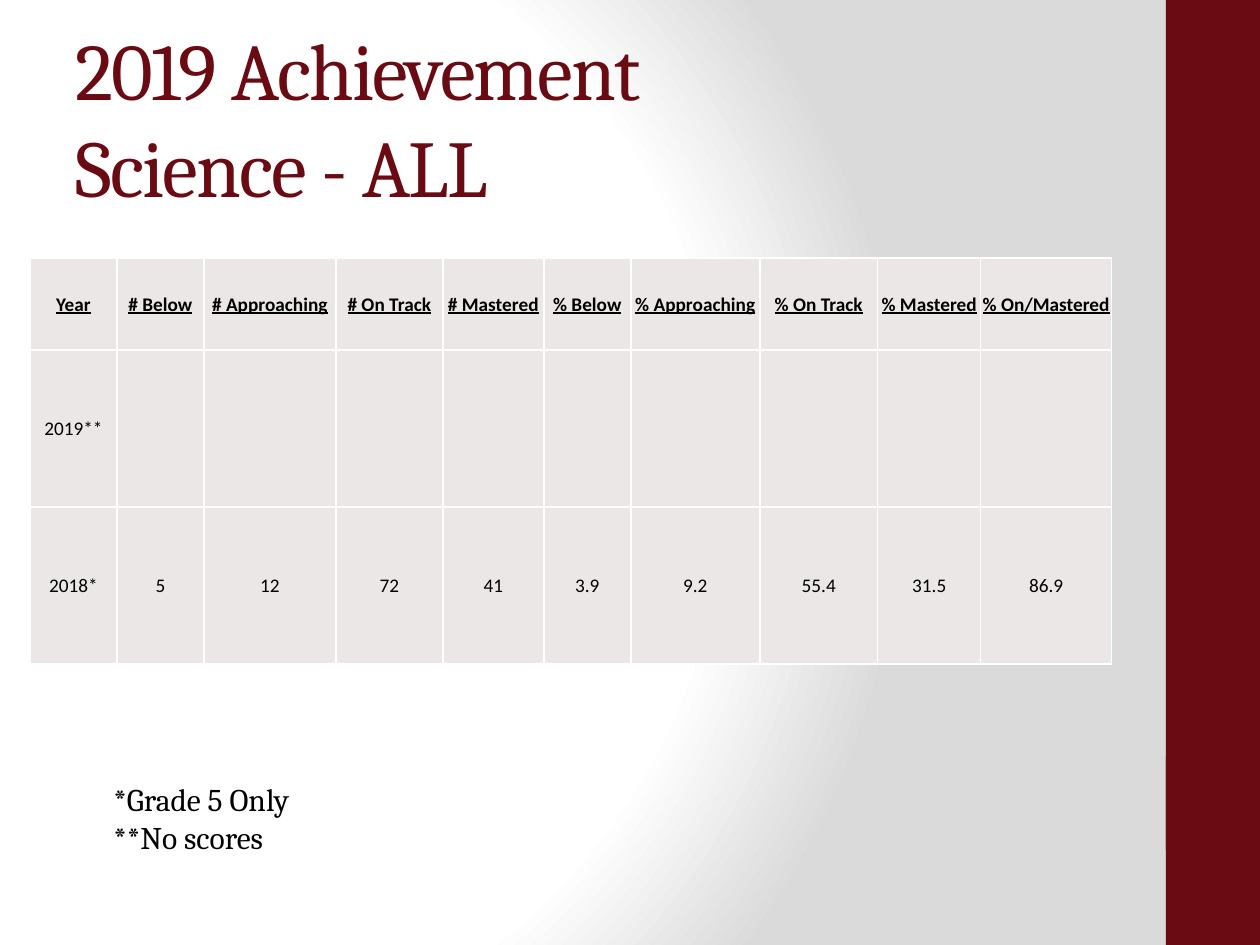
from lxml import etree
from pptx import Presentation
from pptx import util as u
from pptx.dml.color import RGBColor
from pptx.enum import shapes, text
from pptx.oxml import parse_xml
from pptx.oxml.ns import nsdecls, qn

PX = 914400 / 126
COLORS = {"maroon": "6A0A12", "cell": "EBE7E7", "white": "FFFFFF",
          "gray": "DADADA", "black": "000000"}
HEADINGS = ["Year", "# Below", "# Approaching", "# On Track", "# Mastered",
            "% Below", "% Approaching", "% On Track", "% Mastered", "% On/Mastered"]
SCORES = [["2019**"] + [""] * 9,
          ["2018*", "5", "12", "72", "41", "3.9", "9.2", "55.4", "31.5", "86.9"]]
COLUMN_WIDTHS = [87, 87, 132, 107, 101, 87, 129, 118, 103, 131]
ROW_HEIGHTS = [92, 157, 157]


def px(length):
    return u.Emu(round(length * PX))


def rgb(name):
    return RGBColor.from_string(COLORS[name])


def style(paragraph, font_name, size, color):
    font = paragraph.font
    font.name, font.size = font_name, u.Pt(size)
    font.color.rgb = rgb(color)


def add_background(slide):
    stops = "".join(
        f'<a:gs pos="{pos * 1000}"><a:srgbClr val="{COLORS[color]}"/></a:gs>'
        for pos, color in [(0, "white"), (75, "white"), (100, "gray")])
    slide._element.cSld.insert(0, parse_xml(
        f'<p:bg {nsdecls("p", "a")}><p:bgPr><a:gradFill rotWithShape="1">'
        f'<a:gsLst>{stops}</a:gsLst><a:path path="circle">'
        '<a:fillToRect l="20000" t="50000" r="100000" b="50000"/></a:path>'
        '</a:gradFill><a:effectLst/></p:bgPr></p:bg>'))


def add_side_band(slide, left, top, width, height):
    # Full-height band, then the square page-number block on it
    for offset, block_height in [(0, height), (756, width)]:
        band = slide.shapes.add_shape(
            shapes.MSO_SHAPE.RECTANGLE,
            *map(px, (left, top + offset, width, block_height)))
        band.shadow.inherit = False
        band.fill.solid()
        band.fill.fore_color.rgb = rgb("maroon")
        band.line.fill.background()


def add_title(slide, left, top, width, height):
    frame = slide.shapes.add_textbox(*map(px, (left, top, width, height))).text_frame
    frame.word_wrap = True
    frame.vertical_anchor = text.MSO_ANCHOR.MIDDLE
    title = frame.paragraphs[0]
    title.text = "2019 Achievement \vScience - ALL"
    style(title, "Cambria", 46, "maroon")
    for run in title.runs:
        run.font._element.set("spc", "-100")


def add_borders(cell):
    properties = cell._tc.get_or_add_tcPr()
    for index, side in enumerate(("lnL", "lnR", "lnT", "lnB")):
        line = etree.Element(qn(f"a:{side}"), w=str(u.Pt(1)))
        fill = etree.SubElement(line, qn("a:solidFill"))
        etree.SubElement(fill, qn("a:srgbClr"), val=COLORS["white"])
        properties.insert(index, line)


def add_score_table(slide, left, top):
    rows = [HEADINGS] + SCORES
    table = slide.shapes.add_table(
        len(rows), len(HEADINGS), px(left), px(top),
        px(sum(COLUMN_WIDTHS)), px(sum(ROW_HEIGHTS))).table
    for column, width in zip(table.columns, COLUMN_WIDTHS):
        column.width = px(width)
    for row, height in zip(table.rows, ROW_HEIGHTS):
        row.height = px(height)
    for r, values in enumerate(rows):
        for c, value in enumerate(values):
            cell = table.cell(r, c)
            cell.fill.solid()
            cell.fill.fore_color.rgb = rgb("cell")
            cell.margin_left = cell.margin_right = cell.margin_top = px(1)
            cell.margin_bottom = 0
            cell.vertical_anchor = text.MSO_ANCHOR.MIDDLE
            entry = cell.text_frame.paragraphs[0]
            entry.text = value
            entry.alignment = text.PP_ALIGN.CENTER
            style(entry, "Calibri", 11, "black")
            entry.font.bold = entry.font.underline = r == 0
            add_borders(cell)


def add_footnotes(slide, left, top, width, height):
    frame = slide.shapes.add_textbox(*map(px, (left, top, width, height))).text_frame
    frame.word_wrap = False
    frame.auto_size = text.MSO_AUTO_SIZE.SHAPE_TO_FIT_TEXT
    frame.text = "*Grade 5 Only\n**No scores"
    for note in frame.paragraphs:
        style(note, "Cambria", 18, "black")


def main():
    deck = Presentation()
    deck.slide_width, deck.slide_height = px(1260), px(945)
    slide = deck.slides.add_slide(deck.slide_layouts[6])
    add_background(slide)
    add_side_band(slide, 1166, 0, 94, 945)
    add_title(slide, 63, 38, 1050, 157)
    add_score_table(slide, 30, 258)
    add_footnotes(slide, 101, 774, 214, 89)
    deck.save("out.pptx")


if __name__ == "__main__":
    main()
